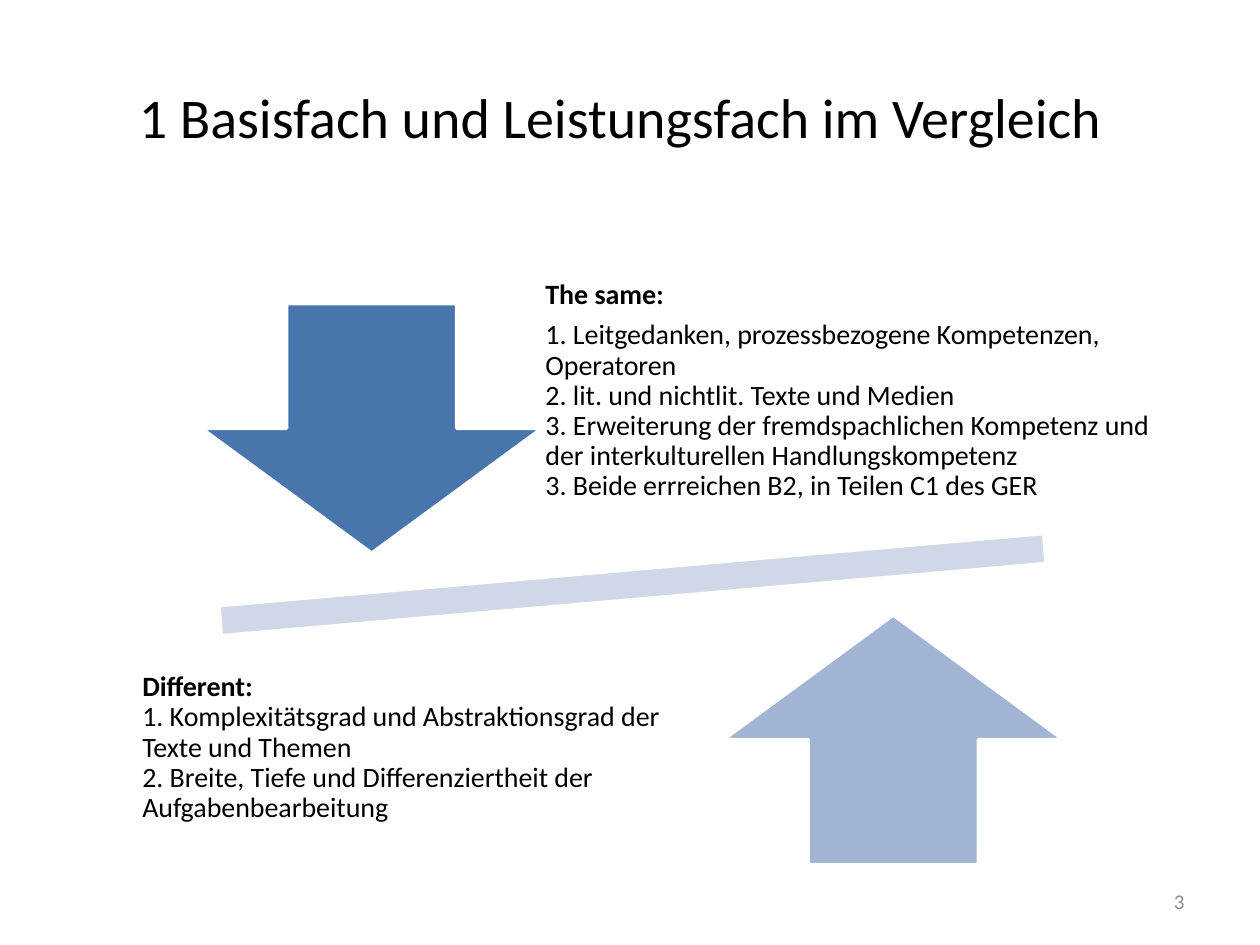
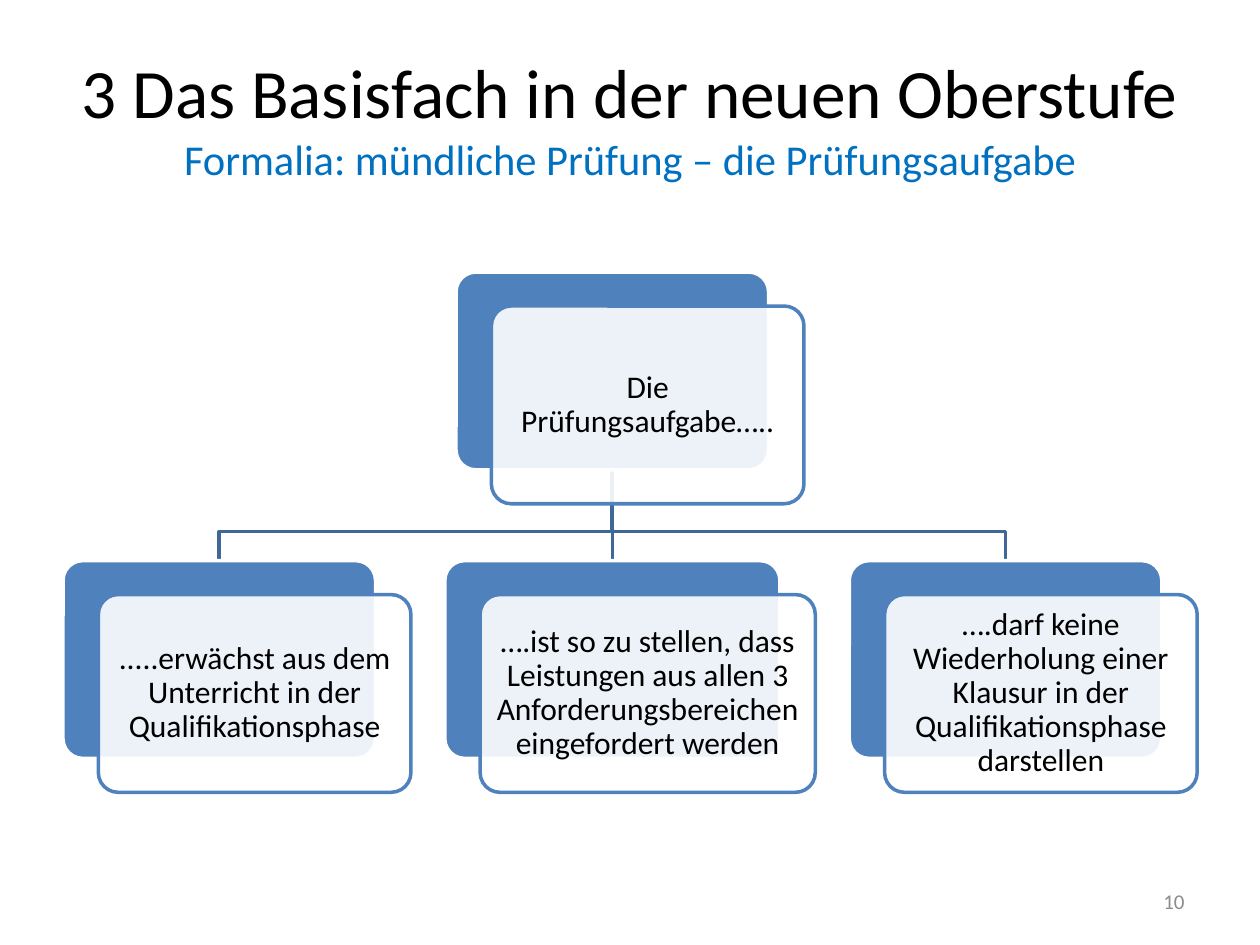
from dataclasses import dataclass

from lxml.etree import SubElement
from pptx import Presentation
from pptx.dml.color import RGBColor
from pptx.enum.shapes import MSO_CONNECTOR as Link, MSO_SHAPE as Kind
from pptx.enum.text import MSO_ANCHOR as Anchor, MSO_AUTO_SIZE as Fit, PP_ALIGN as Align
from pptx.oxml.ns import qn
from pptx.util import Pt

FONT = "Calibri"
BLACK = RGBColor(0x00, 0x00, 0x00)
WHITE = RGBColor(0xFF, 0xFF, 0xFF)
GREY = RGBColor(0x8C, 0x8C, 0x8C)
BLUE = RGBColor(0x4F, 0x81, 0xBD)
DEEP = RGBColor(0x48, 0x75, 0xAC)
SOFT = RGBColor(0xA2, 0xB4, 0xD4)
PALE = RGBColor(0xD0, 0xD8, 0xE8)
NAVY = RGBColor(0x3F, 0x67, 0x97)
SKY = RGBColor(0x00, 0x70, 0xC0)


@dataclass(frozen=True)
class Box:
    left: float
    top: float
    width: float
    height: float

    @property
    def mid(self) -> float:
        return self.left + self.width / 2

    @property
    def end(self) -> float:
        return self.top + self.height

    def shift(self, dx: float, dy: float) -> "Box":
        return Box(self.left + dx, self.top + dy, self.width, self.height)

    def pts(self) -> tuple:
        return Pt(self.left), Pt(self.top), Pt(self.width), Pt(self.height)


@dataclass(frozen=True)
class Run:
    text: str
    size: float
    color: RGBColor = BLACK
    bold: bool = False


@dataclass(frozen=True)
class Sign:
    kind: Kind
    box: Box
    fill: RGBColor
    turn: float = 0


@dataclass(frozen=True)
class Note:
    box: Box
    inset: float
    paras: list


@dataclass(frozen=True)
class Card:
    box: Box
    text: str


NUMBER = Box(516.2, 500.4, 167.8, 28.8)
ARROW = (194.4, 142.6)
SIGNS = [
    Sign(Kind.MATH_MINUS, Box(39.6, 297.4, 643.7, 73.4), PALE, 355),
    Sign(Kind.DOWN_ARROW, Box(115.2, 173.5, *ARROW), DEEP),
    Sign(Kind.UP_ARROW, Box(413.3, 351.4, *ARROW), SOFT),
]
NOTES = [
    Note(Box(303.1, 157, 362.9, 147.6), 3.4, [
        [Run("The same:", 16, bold=True)],
        [Run("1. Leitgedanken, prozessbezogene Kompetenzen, Operatoren\n"
             "2. lit. und nichtlit. Texte und Medien\n"
             "3. Erweiterung der fremdspachlichen Kompetenz "
             "und der interkulturellen Handlungskompetenz\n"
             "3. Beide errreichen B2, in Teilen C1 des GER", 16)],
    ]),
    Note(Box(72.7, 373.7, 331.9, 127.4), 10.7, [
        [Run("Different:\n", 16, bold=True),
         Run("1. Komplexitätsgrad und Abstraktionsgrad der Texte und Themen\n"
             "2. Breite, Tiefe und Differenziertheit der Aufgabenbearbeitung", 16)],
    ]),
]

CARD_W, CARD_H, GAP = 178.6, 113, 39.6
KIDS_TOP, FORK = 320.4, 303.8
ROOT = Card(Box(260.6, 155.5, CARD_W, CARD_H), "Die Prüfungsaufgabe…..")
KIDS = [
    (CARD_W, ".....erwächst aus dem Unterricht in der Qualifikationsphase"),
    (191.5, "….ist so zu stellen, dass Leistungen aus allen 3 "
            "Anforderungsbereichen eingefordert werden"),
    (CARD_W, "….darf keine Wiederholung einer Klausur in der "
             "Qualifikationsphase darstellen"),
]


def write(para, runs: list[Run], align: Align) -> None:
    para.alignment = align
    for run in runs:
        for i, part in enumerate(run.text.split("\n")):
            if i:
                para.add_line_break()
            if part:
                item = para.add_run()
                item.text = part
                font = item.font
                font.name, font.size, font.bold = FONT, Pt(run.size), run.bold
                font.color.rgb = run.color


def tighten(para) -> None:
    para.line_spacing = 0.9
    para.space_after = Pt(5.6)


def paint(shape, fill: RGBColor, line: RGBColor) -> None:
    shape.shadow.inherit = False
    shape.fill.solid()
    shape.fill.fore_color.rgb = fill
    shape.line.color.rgb = line
    shape.line.width = Pt(2)


def start(deck, box: Box, runs: list[Run], number: str):
    """Add a slide with its title and slide number."""
    slide = deck.slides.add_slide(deck.slide_layouts[5])
    title = slide.shapes.title
    title.left, title.top, title.width, title.height = box.pts()
    frame = title.text_frame
    frame.auto_size, frame.vertical_anchor = Fit.NONE, Anchor.MIDDLE
    write(frame.paragraphs[0], runs, Align.CENTER)
    foot = slide.shapes.add_textbox(*NUMBER.pts()).text_frame
    foot.word_wrap, foot.vertical_anchor = True, Anchor.MIDDLE
    write(foot.paragraphs[0], [Run(number, 12, GREY)], Align.RIGHT)
    return slide


def add_sign(slide, sign: Sign) -> None:
    shape = slide.shapes.add_shape(sign.kind, *sign.box.pts())
    paint(shape, sign.fill, WHITE)
    shape.rotation = sign.turn


def add_note(slide, note: Note) -> None:
    frame = slide.shapes.add_textbox(*note.box.pts()).text_frame
    frame.word_wrap, frame.vertical_anchor = True, Anchor.TOP
    frame.margin_left = frame.margin_right = Pt(8.6)
    frame.margin_top = Pt(note.inset)
    for i, runs in enumerate(note.paras):
        para = frame.add_paragraph() if i else frame.paragraphs[0]
        write(para, runs, Align.LEFT)
        tighten(para)


def add_card(slide, card: Card) -> None:
    """Draw a blue plate and, in front of it, a sheer plate with the text."""
    front = card.box.shift(20.2, 19.4)
    for box, fill, line in ((card.box, BLUE, WHITE), (front, WHITE, BLUE)):
        plate = slide.shapes.add_shape(Kind.ROUNDED_RECTANGLE, *box.pts())
        plate.adjustments[0] = 0.1
        paint(plate, fill, line)
    tint = plate.fill._xPr.find(qn("a:solidFill"))[0]
    SubElement(tint, qn("a:alpha")).set("val", "90000")
    frame = plate.text_frame
    frame.word_wrap, frame.vertical_anchor = True, Anchor.MIDDLE
    frame.margin_left = frame.margin_right = Pt(1.7)
    frame.margin_top = frame.margin_bottom = Pt(1.7)
    para = frame.paragraphs[0]
    write(para, [Run(card.text, 18)], Align.CENTER)
    tighten(para)


def add_branch(slide, root: Box, kid: Box) -> None:
    """Link two cards, with a bend unless they stand in one column."""
    x, y = Pt(root.mid), Pt(root.end)
    end_x, end_y = Pt(kid.mid), Pt(kid.top)
    if abs(root.mid - kid.mid) < 1:
        branch = slide.shapes.add_connector(Link.STRAIGHT, x, y, x, end_y)
        SubElement(branch._element.spPr, qn("a:effectLst"))
    else:
        path = slide.shapes.build_freeform(x, y)
        path.add_line_segments(
            [(x, Pt(FORK)), (end_x, Pt(FORK)), (end_x, end_y)], close=False)
        branch = path.convert_to_shape()
        branch.fill.background()
        branch.shadow.inherit = False
    branch.line.color.rgb = NAVY
    branch.line.width = Pt(2)


def compare(deck) -> None:
    slide = start(deck, Box(25.2, 21.6, 658.8, 90),
                  [Run("1 Basisfach und Leistungsfach im Vergleich", 32)], "3")
    for sign in SIGNS:
        add_sign(slide, sign)
    for note in NOTES:
        add_note(slide, note)


def exam(deck) -> None:
    slide = start(deck, Box(36, 21.6, 648, 90), [
        Run("3 Das Basisfach in der neuen Oberstufe\n", 39.6),
        Run("Formalia: mündliche Prüfung – die Prüfungsaufgabe", 24.3, SKY),
    ], "10")
    kids, left = [], 36
    for width, text in KIDS:
        kids.append(Card(Box(left, KIDS_TOP, width, CARD_H), text))
        left += width + GAP
    for kid in kids:
        add_branch(slide, ROOT.box, kid.box)
    for card in [ROOT, *kids]:
        add_card(slide, card)


def main() -> None:
    deck = Presentation()
    deck.slide_width, deck.slide_height = Pt(720), Pt(540)
    compare(deck)
    exam(deck)
    deck.save("out.pptx")


if __name__ == "__main__":
    main()
